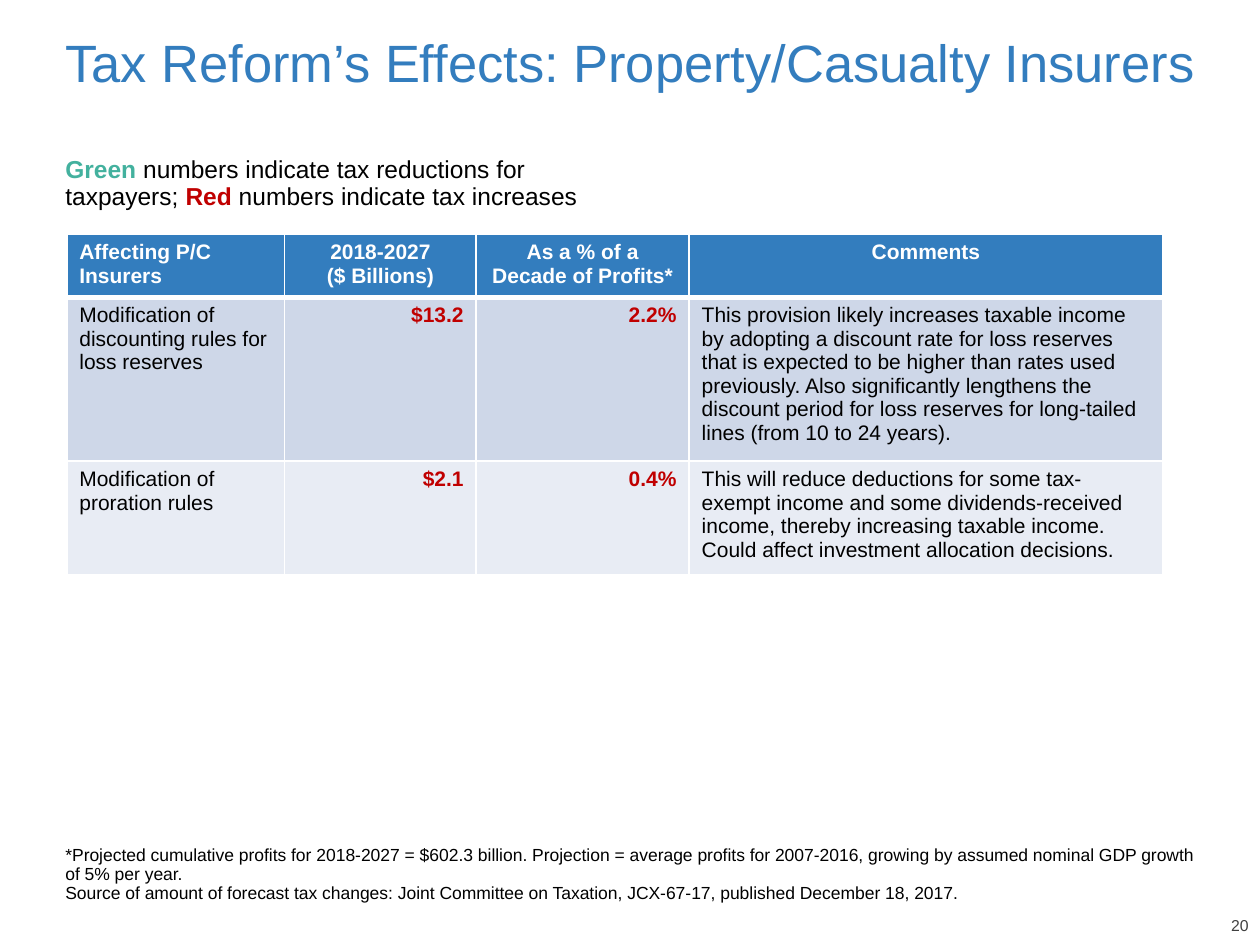
from dataclasses import dataclass

from lxml.etree import SubElement
from pptx import Presentation
from pptx.dml.color import RGBColor
from pptx.enum.text import MSO_ANCHOR, PP_ALIGN
from pptx.oxml.ns import qn
from pptx.slide import Slide
from pptx.util import Inches, Pt

WIDTH, HEIGHT = 10, 7.5
COLORS = {
    "blue": "337DBE", "green": "43B19E", "red": "C00000", "black": "000000",
    "white": "FFFFFF", "grey": "404040", "band_dark": "CED7E8", "band_light": "E8ECF4",
}
LEFT, CENTER, RIGHT = PP_ALIGN.LEFT, PP_ALIGN.CENTER, PP_ALIGN.RIGHT


def rgb(name):
    return RGBColor.from_string(COLORS[name])


def set_all(target, values):
    for attribute, value in values.items():
        setattr(target, attribute, value)


@dataclass
class SlideBuilder:
    slide: Slide
    font: str = "Arial"

    def add_runs(self, paragraph, runs, size, **layout):
        """Fill a paragraph with (text, color, bold) runs; a newline is a line break."""
        set_all(paragraph, layout)
        for text, color, bold in runs:
            for index, line in enumerate(text.split("\n")):
                if index:
                    paragraph.add_line_break()
                run = paragraph.add_run()
                run.text = line
                set_all(run.font, {"name": self.font, "size": Pt(size), "bold": bold})
                run.font.color.rgb = rgb(color)

    def text(self, box, runs, size, align=LEFT, anchor=MSO_ANCHOR.TOP, insets=(0.1, 0.05)):
        """Place text; box is left, top, width, height as shares of the slide."""
        left, top, width, height = box
        frame = self.slide.shapes.add_textbox(
            Inches(left * WIDTH), Inches(top * HEIGHT),
            Inches(width * WIDTH), Inches(height * HEIGHT)).text_frame
        across, down = map(Inches, insets)
        set_all(frame, {
            "word_wrap": True, "vertical_anchor": anchor,
            "margin_left": across, "margin_right": across,
            "margin_top": down, "margin_bottom": down})
        self.add_runs(frame.paragraphs[0], runs, size, alignment=align, line_spacing=0.9)

    def borders(self, cell, bottom):
        properties = cell._tc.get_or_add_tcPr()
        sides = {"a:lnL": 1, "a:lnR": 1, "a:lnT": 1, "a:lnB": bottom}
        for position, (side, points) in enumerate(sides.items()):
            line = SubElement(properties, qn(side), w=str(Pt(points)))
            fill = SubElement(line, qn("a:solidFill"))
            SubElement(fill, qn("a:srgbClr"), val=COLORS["white"])
            properties.insert(position, line)

    def table(self, corner, widths, heights, rows, bands, styles, size):
        """Place a table; styles gives (color, bold, align) per cell of each row."""
        left, top = corner
        grid = self.slide.shapes.add_table(
            len(rows), len(widths), Inches(left * WIDTH), Inches(top * HEIGHT),
            Inches(sum(widths)), Inches(sum(heights))).table
        for column, width in zip(grid.columns, widths):
            column.width = Inches(width)
        for r, (texts, band, row_style) in enumerate(zip(rows, bands, styles)):
            grid.rows[r].height = Inches(heights[r])
            for c, (text, (color, bold, align)) in enumerate(zip(texts, row_style)):
                cell = grid.cell(r, c)
                cell.fill.solid()
                cell.fill.fore_color.rgb = rgb(band)
                self.borders(cell, bottom=1 if r else 3)
                self.add_runs(cell.text_frame.paragraphs[0], [(text, color, bold)],
                              size, alignment=align)


def main():
    deck = Presentation()
    set_all(deck, {"slide_width": Inches(WIDTH), "slide_height": Inches(HEIGHT)})
    page = SlideBuilder(deck.slides.add_slide(deck.slide_layouts[6]))
    margin, content = 0.042, 0.925

    # Title
    page.text((margin, 0.033, content, 0.068),
              [("Tax Reform’s Effects: Property/Casualty Insurers", "blue", False)], 30)

    # Color key
    page.text((margin, 0.16, 0.479, 0.081), [
        ("Green", "green", True),
        (" numbers indicate tax reductions for taxpayers; ", "black", False),
        ("Red", "red", True),
        (" numbers indicate tax increases", "black", False)], 14)

    # Tax provisions
    provisions = [
        ("Affecting P/C Insurers", "2018-2027\n($ Billions)",
         "As a % of a Decade of Profits*", "Comments"),
        ("Modification of discounting rules for loss reserves", "$13.2", "2.2%",
         "This provision likely increases taxable income by adopting a discount rate "
         "for loss reserves that is expected to be higher than rates used previously. "
         "Also significantly lengthens the discount period for loss reserves for "
         "long-tailed lines (from 10 to 24 years)."),
        ("Modification of proration rules", "$2.1", "0.4%",
         "This will reduce deductions for some tax-exempt income and some "
         "dividends-received income, thereby increasing taxable income. "
         "Could affect investment allocation decisions."),
    ]
    heading = [("white", True, LEFT)] + [("white", True, CENTER)] * 3
    wording, amount = ("black", False, LEFT), ("red", True, RIGHT)
    provision = [wording, amount, amount, wording]
    page.table((0.053, 0.248), (1.73, 1.52, 1.69, 3.76), (0.47, 1.22, 0.85), provisions,
               ("blue", "band_dark", "band_light"), (heading, provision, provision), 12)

    # Footnote and source
    page.text((margin, 0.876, content, 0.08), [(
        "*Projected cumulative profits for 2018-2027 = $602.3 billion. Projection = average "
        "profits for 2007-2016, growing by assumed nominal GDP growth of 5% per year.\n"
        "Source of amount of forecast tax changes: Joint Committee on Taxation, JCX-67-17, "
        "published December 18, 2017.", "black", False)],
        10, anchor=MSO_ANCHOR.BOTTOM, insets=(0.1, 0))

    # Page number
    page.text((0.943, 0.972, 0.048, 0.017), [("20", "grey", False)], 9,
              align=RIGHT, anchor=MSO_ANCHOR.BOTTOM, insets=(0, 0))

    deck.save("out.pptx")


if __name__ == "__main__":
    main()
